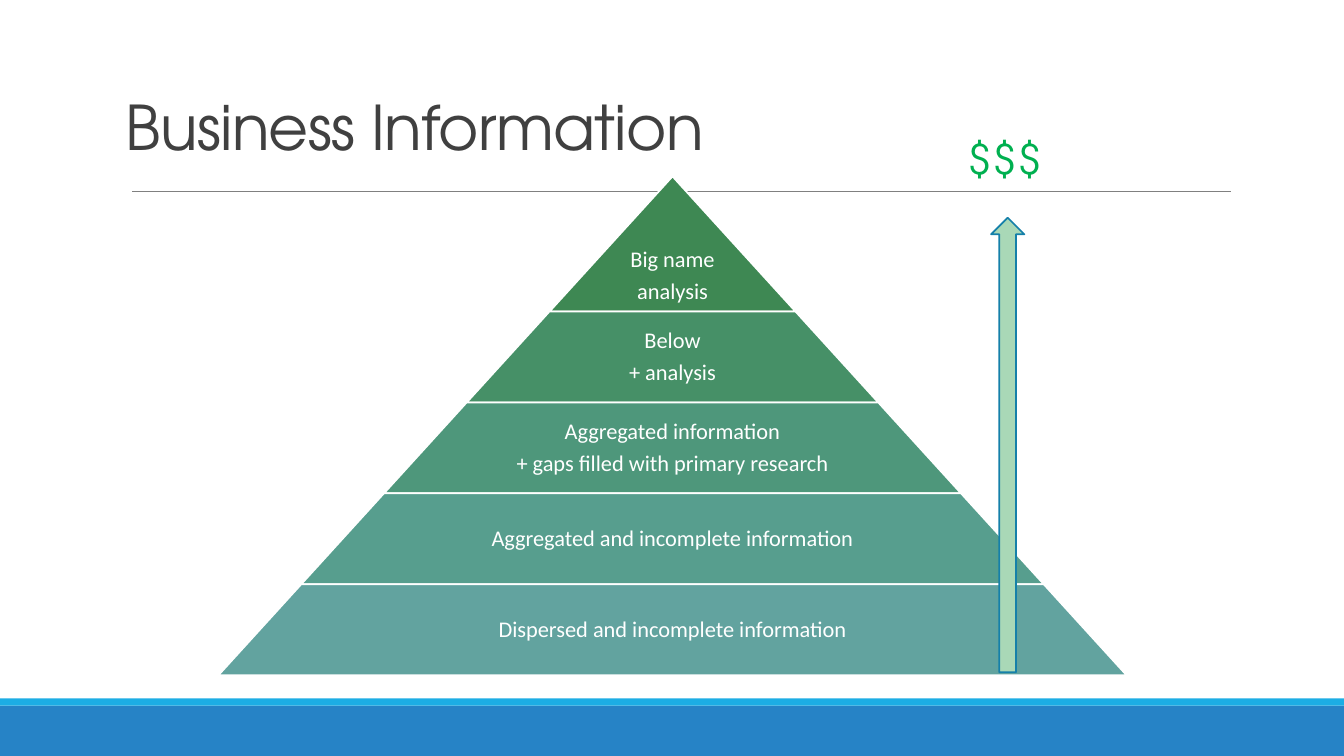
"""Build the Business Information pyramid slide."""
import pptx
import pptx.dml.color
import pptx.enum.shapes
import pptx.enum.text
import pptx.oxml.ns
import pptx.util
from lxml import etree

Inches = pptx.util.Inches
Pt = pptx.util.Pt
Shape = pptx.enum.shapes.MSO_SHAPE
Anchor = pptx.enum.text.MSO_ANCHOR
Align = pptx.enum.text.PP_ALIGN


def color(hex_code):
    """Turn a hex string into a colour."""
    return pptx.dml.color.RGBColor.from_string(hex_code)


def write(frame, text, font="TeX Gyre Adventor", size=16, fill="FFFFFF", align=Align.LEFT,
          line_spacing=1.0, space_after=0, tracking=None):
    """Fill a text frame with one paragraph per line of text."""
    for index, line in enumerate(text.split("\n")):
        paragraph = frame.paragraphs[0] if index == 0 else frame.add_paragraph()
        paragraph.alignment = align
        paragraph.line_spacing = line_spacing
        paragraph.space_after = Pt(space_after)
        run = paragraph.add_run()
        run.text = line
        run.font.name = font
        run.font.size = Pt(size)
        run.font.color.rgb = color(fill)
        if tracking is not None:
            run.font._element.set("spc", str(int(tracking * 100)))


class SlideBuilder:
    """Hold the style and the current slide."""

    heading_color = "404040"
    rule_color = "808080"
    body_font = "Calibri"

    def __init__(self, slide):
        """Keep the slide to draw on."""
        self.slide = slide

    def shape(self, kind, left, top, width, height, fill, line=None, adjust=None):
        """Add a filled preset shape."""
        shape = self.slide.shapes.add_shape(
            kind, Inches(left), Inches(top), Inches(width), Inches(height))
        shape.shadow.inherit = False
        shape.fill.solid()
        shape.fill.fore_color.rgb = color(fill)
        if line:
            shape.line.color.rgb = color(line)
            shape.line.width = Pt(1.25)
        else:
            shape.line.fill.background()
        if adjust is not None:
            shape.adjustments[0] = adjust

    def rule(self, left, right, y):
        """Add a thin horizontal line."""
        rule = self.slide.shapes.add_connector(
            pptx.enum.shapes.MSO_CONNECTOR.STRAIGHT,
            Inches(left), Inches(y), Inches(right), Inches(y))
        rule.line.color.rgb = color(self.rule_color)
        rule.line.width = Pt(0.5)
        etree.SubElement(rule._element.spPr, pptx.oxml.ns.qn("a:effectLst"))

    def text(self, text, left, top, width, height, anchor=Anchor.TOP, inset=None, **style):
        """Add a wrapping text box."""
        box = self.slide.shapes.add_textbox(
            Inches(left), Inches(top), Inches(width), Inches(height))
        frame = box.text_frame
        frame.word_wrap = True
        frame.vertical_anchor = anchor
        if inset is not None:
            frame.margin_left = frame.margin_right = Inches(inset)
            frame.margin_top = frame.margin_bottom = Inches(inset)
        write(frame, text, **style)

    def pyramid(self, levels, center, apex, tip_bottom, base, slope):
        """Stack trapezoids from the apex down to the base with their labels."""
        step = (base - tip_bottom) / (len(levels) - 1)
        top = apex
        for index, (label, fill) in enumerate(levels):
            bottom = tip_bottom + index * step
            width = 2 * slope * (bottom - apex)
            self.shape(Shape.TRAPEZOID, center - width / 2, top, width, bottom - top,
                       fill, line="FFFFFF", adjust=slope)
            label_width = width if index == 0 else width * 0.65
            label_top = bottom - 0.8 if index == 0 else top
            self.text(label, center - label_width / 2, label_top, label_width, step,
                      anchor=Anchor.MIDDLE, inset=0.02, font=self.body_font,
                      align=Align.CENTER, line_spacing=0.9, space_after=5.6)
            top = bottom


def main():
    """Build and save the deck."""
    deck = pptx.Presentation()
    deck.slide_width = Inches(13.33)
    deck.slide_height = Inches(7.5)
    builder = SlideBuilder(deck.slides.add_slide(deck.slide_layouts[6]))

    builder.shape(Shape.RECTANGLE, 0, 7, 13.33, 0.5, "2683C6")
    builder.shape(Shape.RECTANGLE, 0, 6.93, 13.33, 0.07, "1CADE4")
    builder.rule(1.31, 12.21, 1.9)
    builder.text("Business Information", 1.15, 0.85, 9.08, 0.82, anchor=Anchor.BOTTOM,
                 size=44, fill=builder.heading_color, line_spacing=0.85, tracking=-0.5)

    levels = [
        ("Big name\nanalysis", "3E8853"),
        ("Below\n+ analysis", "469067"),
        ("Aggregated information\n+ gaps filled with primary research", "4E977B"),
        ("Aggregated and incomplete information", "579E8E"),
        ("Dispersed and incomplete information", "62A39F"),
    ]
    builder.pyramid(levels, center=6.67, apex=1.75, tip_bottom=3.09, base=6.7, slope=0.91)

    builder.shape(Shape.UP_ARROW, 9.83, 2.16, 0.33, 4.51, "A9D8B7", line="1580A9")
    builder.text("$$$", 9.5, 1.26, 1, 0.69, size=32, fill="00B050")
    deck.save("out.pptx")


if __name__ == "__main__":
    main()
